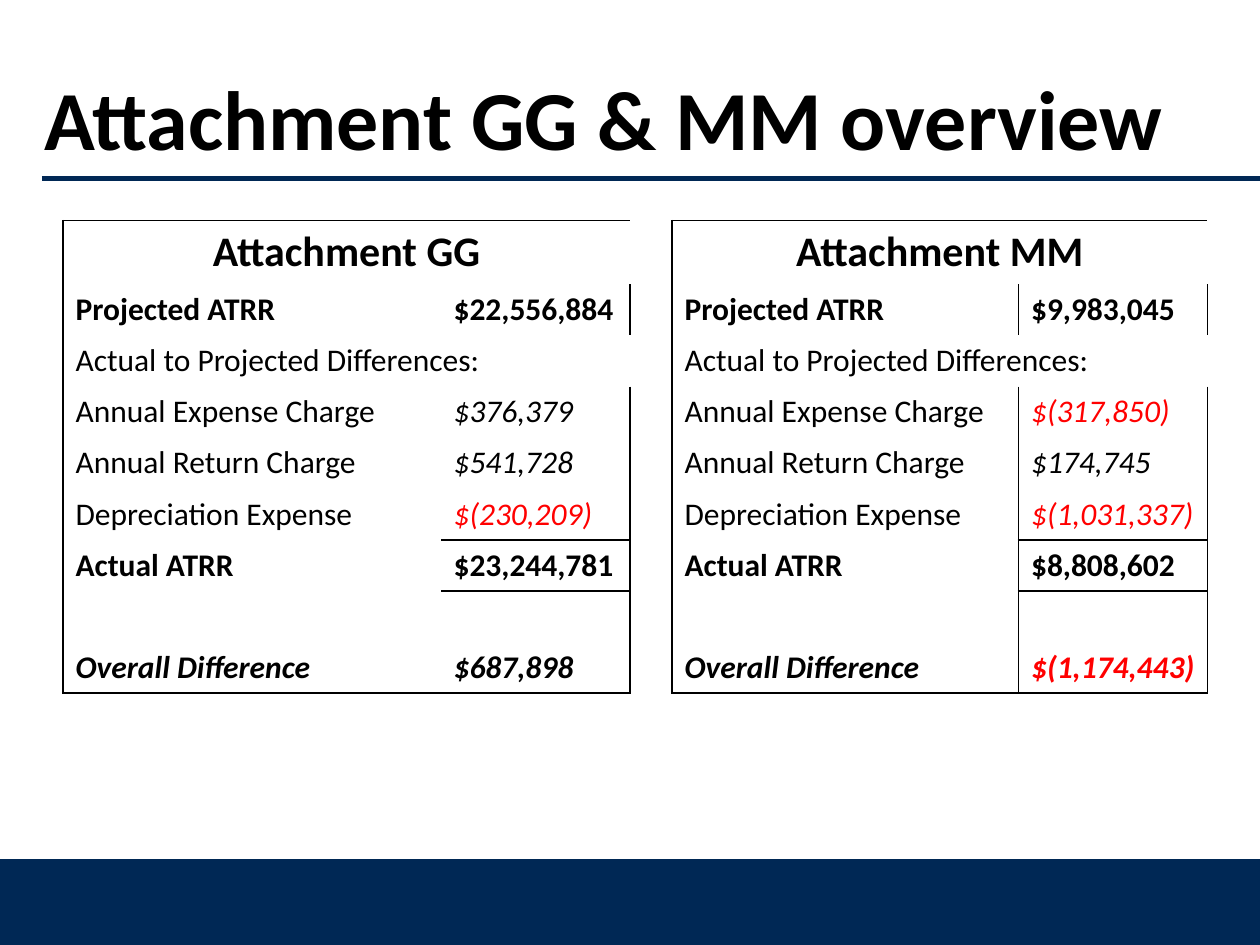
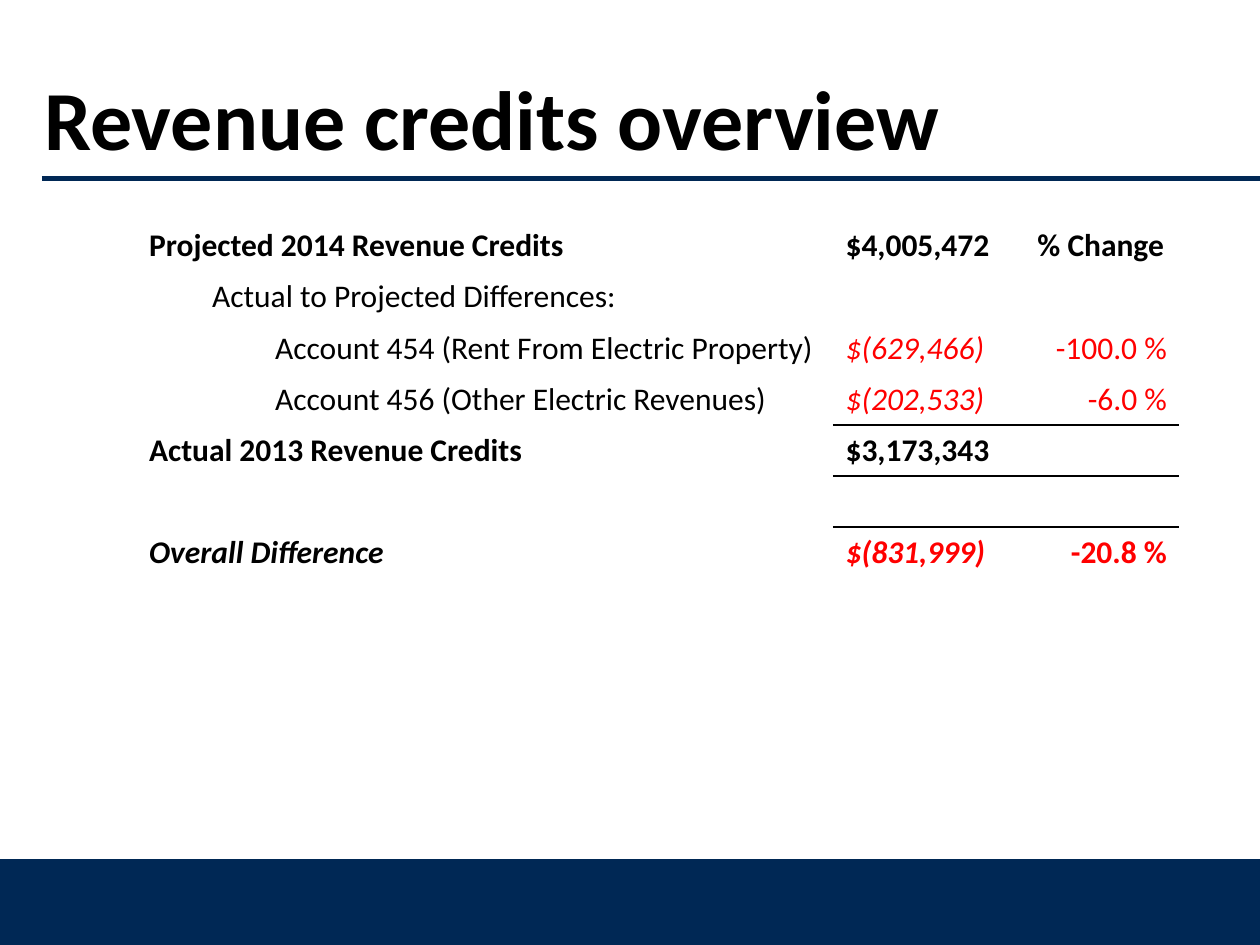
from pptx import Presentation
from pptx import util as u
from pptx.dml.color import RGBColor
from pptx.enum import shapes, text
from pptx.oxml.ns import qn
from lxml import etree

Pt = u.Pt
FONT = "Calibri"
COLOURS = {"navy": "002855", "black": "000000", "red": "FF0000"}
NO_STYLE_NO_GRID = "{2D5ABB26-0587-4C30-8999-92F81FD0307C}"
EDGES = ["lnL", "lnR", "lnT", "lnB"]
WIDTH, HEIGHT = 720, 540
ROW_HEIGHT, CAPTION_HEIGHT = 29.2, 36.5
INDENT = 36

# Row styles: (bold, italic label, italic amount)
ROW_STYLES = {
    "heading": (True, False, False),
    "detail": (False, False, True),
    "total": (True, True, True),
}

# Rows: style, label, GG amount, MM amount
ATTACHMENTS = ["Attachment GG", "Attachment MM"]
ATTACHMENT_ROWS = [
    ("heading", "Projected ATRR", "$22,556,884", "$9,983,045"),
    ("detail", "Actual to Projected Differences:", "", ""),
    ("detail", "Annual Expense Charge", "$376,379", "$(317,850)"),
    ("detail", "Annual Return Charge", "$541,728", "$174,745"),
    ("detail", "Depreciation Expense", "$(230,209)", "$(1,031,337)"),
    ("heading", "Actual ATRR", "$23,244,781", "$8,808,602"),
    ("detail", "", "", ""),
    ("total", "Overall Difference", "$687,898", "$(1,174,443)"),
]

# Rows: style, indent level, label, amount, change
CREDIT_ROWS = [
    ("heading", 0, "Projected 2014 Revenue Credits", "$4,005,472", "% Change"),
    ("detail", 1, "Actual to Projected Differences:", "", ""),
    ("detail", 2, "Account 454 (Rent From Electric Property)", "$(629,466)", "-100.0 %"),
    ("detail", 2, "Account 456 (Other Electric Revenues)", "$(202,533)", "-6.0 %"),
    ("heading", 0, "Actual 2013 Revenue Credits", "$3,173,343", ""),
    ("detail", 0, "", "", ""),
    ("total", 0, "Overall Difference", "$(831,999)", "-20.8 %"),
]


def colour(name):
    return RGBColor.from_string(COLOURS[name])


def format_font(font, size, bold=False, italic=False, name="black"):
    font.name = FONT
    font.size = Pt(size)
    font.bold = bold
    font.italic = italic
    font.color.rgb = colour(name)


# Shared slide frame: footer band, title rule and title
def add_framed_slide(presentation, title, title_width):
    slide = presentation.slides.add_slide(presentation.slide_layouts[5])

    band = slide.shapes.add_shape(shapes.MSO_SHAPE.RECTANGLE, 0, Pt(492), Pt(WIDTH), Pt(48))
    band.shadow.inherit = False
    band.fill.solid()
    band.fill.fore_color.rgb = colour("navy")
    band.line.color.rgb = colour("navy")
    band.line.width = Pt(2)

    rule = slide.shapes.add_connector(
        shapes.MSO_CONNECTOR.STRAIGHT, Pt(24), Pt(102), Pt(WIDTH), Pt(102))
    rule.line.color.rgb = colour("navy")
    rule.line.width = Pt(3)
    etree.SubElement(rule._element.spPr, qn("a:effectLst"))

    shape = slide.shapes.title
    shape.left, shape.top, shape.width, shape.height = Pt(18), Pt(21.6), Pt(title_width), Pt(90)
    frame = shape.text_frame
    frame.text = title
    frame.auto_size = text.MSO_AUTO_SIZE.NONE
    frame.vertical_anchor = text.MSO_ANCHOR.MIDDLE
    frame.paragraphs[0].alignment = text.PP_ALIGN.LEFT
    format_font(frame.paragraphs[0].runs[0].font, 48, bold=True)
    return slide


# Table helpers
def add_plain_table(slide, left, column_widths, row_heights):
    frame = slide.shapes.add_table(
        len(row_heights), len(column_widths), Pt(left), Pt(126),
        Pt(sum(column_widths)), Pt(sum(row_heights)))
    table = frame.table
    table.first_row = table.horz_banding = False
    table._tbl.tblPr.find(qn("a:tableStyleId")).text = NO_STYLE_NO_GRID
    for column, width in zip(table.columns, column_widths):
        column.width = Pt(width)
    for row, height in zip(table.rows, row_heights):
        row.height = Pt(height)
    for cell in table.iter_cells():
        cell.fill.background()
    return table


def write_cell(cell, words, size=18, bold=False, italic=False, align=None, level=0):
    if not words:
        return
    cell.text_frame.text = words
    paragraph = cell.text_frame.paragraphs[0]
    paragraph.alignment = align
    if level:
        paragraph.level = level
        paragraph._p.get_or_add_pPr().set("marL", str(Pt(INDENT * level)))
    negative = words.startswith(("$(", "-"))
    format_font(paragraph.runs[0].font, size, bold, italic, "red" if negative else "black")


def set_border(cell, edge):
    properties = cell._tc.get_or_add_tcPr()
    if properties.find(qn("a:" + edge)) is not None:
        return
    earlier = [e for e in EDGES[:EDGES.index(edge)] if properties.find(qn("a:" + e)) is not None]
    line = etree.Element(qn("a:" + edge), w=str(Pt(1)))
    fill = etree.SubElement(line, qn("a:solidFill"))
    etree.SubElement(fill, qn("a:srgbClr"), val=COLOURS["black"])
    properties.insert(len(earlier), line)


def rule_below(table, row, columns):
    for column in columns:
        set_border(table.cell(row, column), "lnB")
        set_border(table.cell(row + 1, column), "lnT")


def outline_columns(table, first, last):
    bottom = len(table.rows) - 1
    for row in range(bottom + 1):
        set_border(table.cell(row, first), "lnL")
        set_border(table.cell(row, last), "lnR")
    for column in range(first, last + 1):
        set_border(table.cell(0, column), "lnT")
        set_border(table.cell(bottom, column), "lnB")


# Slide contents
def add_attachment_table(slide):
    heights = [CAPTION_HEIGHT] + [ROW_HEIGHT] * len(ATTACHMENT_ROWS)
    table = add_plain_table(slide, 36, [216, 108, 24, 198, 108], heights)
    for index, caption in enumerate(ATTACHMENTS):
        first = 3 * index
        table.cell(0, first).merge(table.cell(0, first + 1))
        write_cell(table.cell(0, first), caption, 24, bold=True, align=text.PP_ALIGN.CENTER)
        for row, (style, label, *amounts) in enumerate(ATTACHMENT_ROWS, 1):
            bold, italic_label, italic_amount = ROW_STYLES[style]
            label_cell, amount_cell = table.cell(row, first), table.cell(row, first + 1)
            if label and not amounts[index]:
                label_cell.merge(amount_cell)
            write_cell(label_cell, label, bold=bold, italic=italic_label)
            write_cell(amount_cell, amounts[index], bold=bold, italic=italic_amount)
        outline_columns(table, first, first + 1)
        rule_below(table, 5, [first + 1])


def add_credit_table(slide):
    table = add_plain_table(slide, 78, [398, 108, 90], [ROW_HEIGHT] * len(CREDIT_ROWS))
    for row, (style, level, label, amount, change) in enumerate(CREDIT_ROWS):
        bold, italic_label, italic_amount = ROW_STYLES[style]
        change_align = text.PP_ALIGN.RIGHT if row else text.PP_ALIGN.CENTER
        write_cell(table.cell(row, 0), label, bold=bold, italic=italic_label, level=level)
        write_cell(table.cell(row, 1), amount, bold=bold, italic=italic_amount)
        write_cell(table.cell(row, 2), change, bold=bold, align=change_align)
    for row in (3, 4):
        rule_below(table, row, [1, 2])


def main():
    presentation = Presentation()
    presentation.slide_width, presentation.slide_height = Pt(WIDTH), Pt(HEIGHT)
    add_attachment_table(add_framed_slide(presentation, "Attachment GG & MM overview", 660))
    add_credit_table(add_framed_slide(presentation, "Revenue credits overview", 624))
    presentation.save("out.pptx")


if __name__ == "__main__":
    main()
